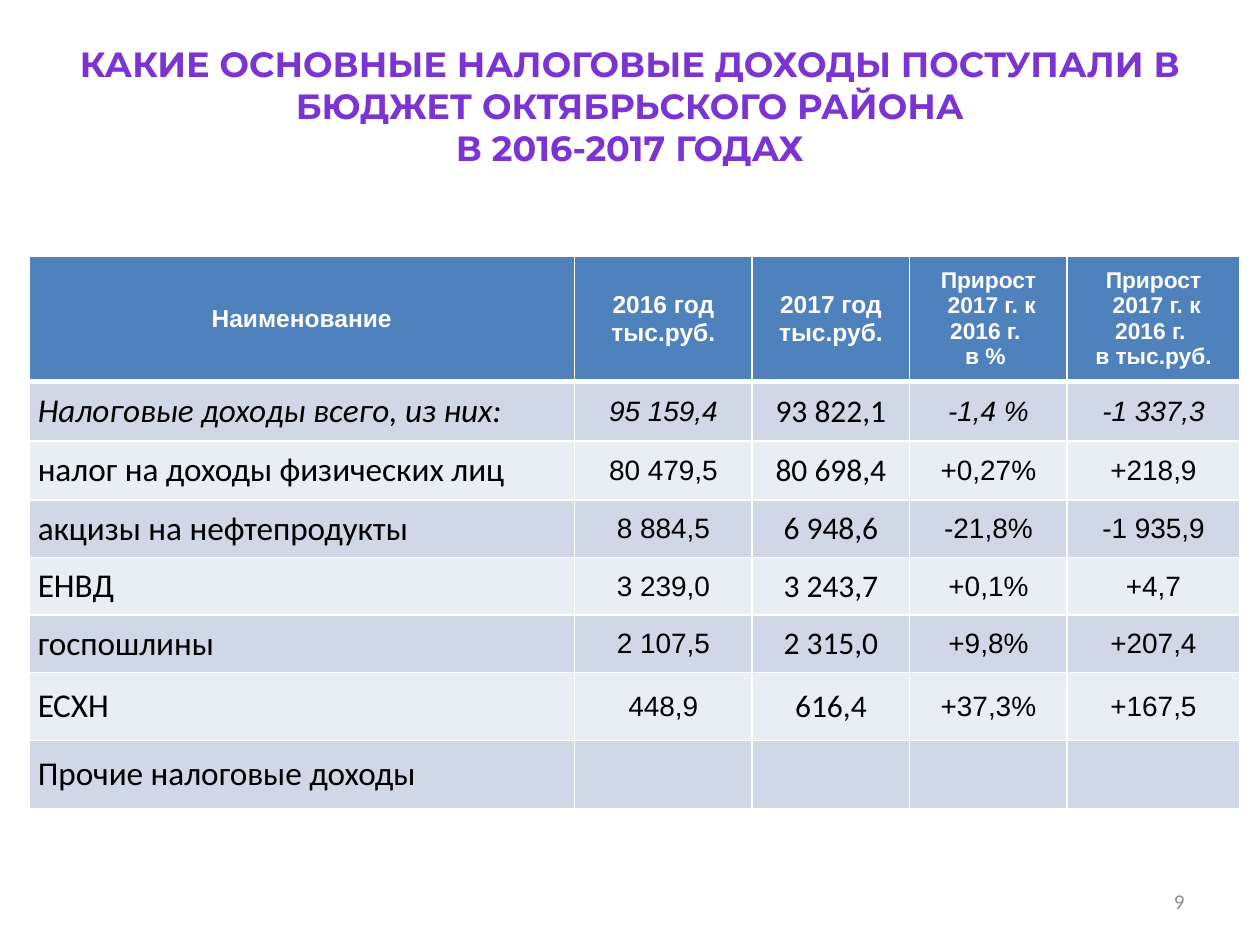
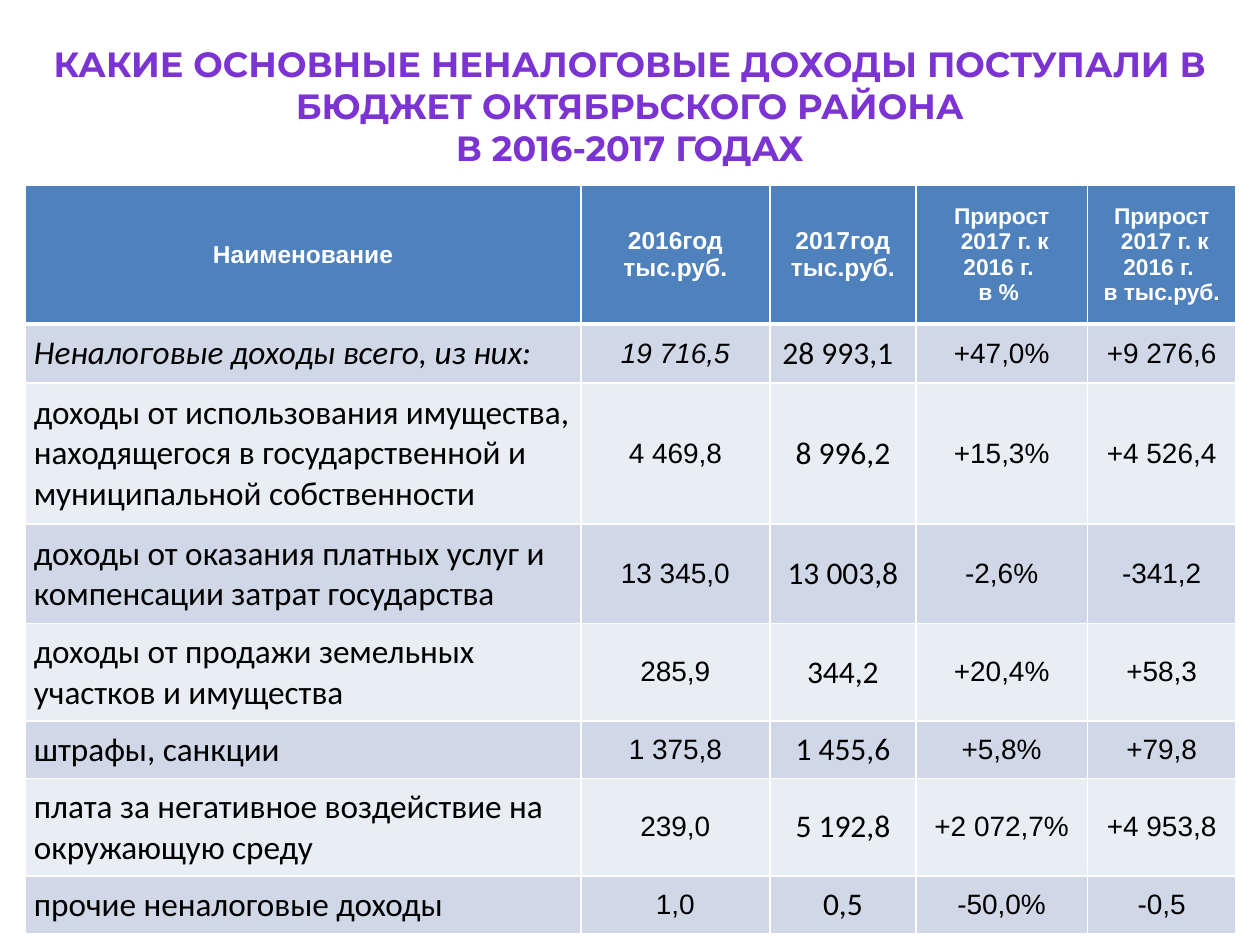
from lxml import etree
from pptx import Presentation
from pptx import util as u
from pptx.dml.color import RGBColor
from pptx.enum import text as t
from pptx.oxml import ns

COLORS = {
    "title": "7B34D2",
    "title_mid": "7330C4",
    "title_dark": "3D1B67",
    "title_outline": "5E457C",
    "number": "8C8C8C",
    "header": "4F81BD",
    "band_dark": "D0D8E8",
    "band_light": "E9EDF4",
    "white": "FFFFFF",
    "black": "000000",
}
TITLE_STOPS = [(0, "title_dark"), (43, "title"), (48, "title_mid"), (100, "title_dark")]
LABEL_MARGIN = 0.07
CENTER, LEFT, RIGHT = t.PP_ALIGN.CENTER, t.PP_ALIGN.LEFT, t.PP_ALIGN.RIGHT
# Font and size of each body column
COLUMN_FONTS = [("Calibri", 19), ("Arial", 16), ("Calibri", 18), ("Arial", 16), ("Arial", 16)]
HEADER_SIZES = [14, 14, 14, 13, 13]

TAX_ROWS = [
    ["Налоговые доходы всего, из них:", "95 159,4", "93 822,1", "-1,4 %", "-1 337,3"],
    ["налог на доходы физических лиц", "80 479,5", "80 698,4", "+0,27%", "+218,9"],
    ["акцизы на нефтепродукты", "8 884,5", "6 948,6", "-21,8%", "-1 935,9"],
    ["ЕНВД", "3 239,0", "3 243,7", "+0,1%", "+4,7"],
    ["госпошлины", "2 107,5", "2 315,0", "+9,8%", "+207,4"],
    ["ЕСХН", "448,9", "616,4", "+37,3%", "+167,5"],
    ["Прочие налоговые доходы", "", "", "", ""],
]
NON_TAX_ROWS = [
    ["Неналоговые доходы всего, из них:", "19 716,5", "28 993,1", "+47,0%", "+9 276,6"],
    ["доходы от использования имущества, находящегося в государственной и "
     "муниципальной собственности", "4 469,8", "8 996,2", "+15,3%", "+4 526,4"],
    ["доходы от оказания платных услуг и компенсации затрат государства",
     "13 345,0", "13 003,8", "-2,6%", "-341,2"],
    ["доходы от продажи земельных участков и имущества",
     "285,9", "344,2", "+20,4%", "+58,3"],
    ["штрафы, санкции", "1 375,8", "1 455,6", "+5,8%", "+79,8"],
    ["плата за негативное воздействие на окружающую среду",
     "239,0", "5 192,8", "+2 072,7%", "+4 953,8"],
    ["прочие неналоговые доходы", "1,0", "0,5", "-50,0%", "-0,5"],
]


def add_element(parent, tag, **attributes):
    element = etree.SubElement(parent, ns.qn(tag))
    for name, value in attributes.items():
        element.set(name, str(value))
    return element


def add_color(parent, color):
    add_element(parent, "a:srgbClr", val=COLORS[color])


def add_line(parent, tag, color, points):
    line = add_element(parent, tag, w=int(u.Pt(points)))
    add_color(add_element(line, "a:solidFill"), color)
    return line


class RevenueDeck:
    """Holds the shared style and the slide being built."""

    def __init__(self):
        self.presentation = Presentation()
        self.presentation.slide_width = u.Inches(10)
        self.presentation.slide_height = u.Inches(7.5)
        self.slide = None

    def add_slide(self):
        self.slide = self.presentation.slides.add_slide(self.presentation.slide_layouts[6])

    def format_text(self, text_frame, font, size, color, align, bold=False, italic=False):
        for paragraph in text_frame.paragraphs:
            paragraph.alignment = align
            for run in paragraph.runs:
                run.font.name = font
                run.font.size = u.Pt(size)
                run.font.bold = bold
                run.font.italic = italic
                run.font.color.rgb = RGBColor.from_string(COLORS[color])

    def add_text(self, text, box, **style):
        shape = self.slide.shapes.add_textbox(*map(u.Inches, box))
        shape.text_frame.word_wrap = True
        shape.text_frame.text = text
        self.format_text(shape.text_frame, **style)
        return shape.text_frame

    def add_title(self, revenue_kind):
        text = (f"КАКИЕ ОСНОВНЫЕ {revenue_kind} ДОХОДЫ ПОСТУПАЛИ В "
                "БЮДЖЕТ ОКТЯБРЬСКОГО РАЙОНА\vВ 2016-2017 ГОДАХ")
        text_frame = self.add_text(text, (0, 0.29, 10, 1.11), font="Montserrat", size=20,
                                   color="title", align=CENTER, bold=True)
        for run in text_frame.paragraphs[0].runs:
            self.add_gradient(run)

    def add_gradient(self, run):
        """Give the run a thin outline and a vertical gradient fill."""
        run.font.fill.background()
        properties = run.font._element
        properties.remove(properties.find(ns.qn("a:noFill")))
        outline = add_line(properties, "a:ln", "title_outline", 0.71)
        gradient = add_element(properties, "a:gradFill")
        stops = add_element(gradient, "a:gsLst")
        for percent, color in TITLE_STOPS:
            add_color(add_element(stops, "a:gs", pos=percent * 1000), color)
        add_element(gradient, "a:lin", ang=90 * 60000, scaled=0)
        properties.insert(0, outline)
        properties.insert(1, gradient)

    def add_number(self, number):
        text_frame = self.add_text(str(number), (7.17, 6.95, 2.33, 0.4), font="Calibri",
                                   size=12, color="number", align=RIGHT)
        text_frame.vertical_anchor = t.MSO_ANCHOR.MIDDLE

    def format_cell(self, cell, text, fill, top=1, bottom=1, **style):
        cell.text = text
        cell.vertical_anchor = t.MSO_ANCHOR.MIDDLE
        self.format_text(cell.text_frame, **style)
        properties = cell._tc.get_or_add_tcPr()
        for side, points in zip("LRTB", (1, 1, top, bottom)):
            add_line(properties, f"a:ln{side}", "white", points)
        cell.fill.solid()
        cell.fill.fore_color.rgb = RGBColor.from_string(COLORS[fill])

    def add_table(self, left, top, widths, heights, header, rows, italic_columns,
                  left_cells=()):
        """Italics apply to the total row; left_cells are (row, column) pairs."""
        box = map(u.Inches, (left, top, sum(widths), sum(heights)))
        table = self.slide.shapes.add_table(len(heights), len(widths), *box).table
        for column, width in zip(table.columns, widths):
            column.width = u.Inches(width)
        for row, height in zip(table.rows, heights):
            row.height = u.Inches(height)

        for column, (text, size) in enumerate(zip(header, HEADER_SIZES)):
            self.format_cell(table.cell(0, column), text, "header", bottom=3, font="Arial",
                             size=size, color="white", align=CENTER, bold=True)
        for row, values in enumerate(rows, start=1):
            fill = "band_dark" if row % 2 else "band_light"
            for column, (text, (font, size)) in enumerate(zip(values, COLUMN_FONTS)):
                cell = table.cell(row, column)
                at_left = column == 0 or (row, column) in left_cells
                self.format_cell(cell, text, fill, top=3 if row == 1 else 1, font=font,
                                 size=size, color="black", align=LEFT if at_left else CENTER,
                                 italic=row == 1 and column in italic_columns)
                if column == 0:
                    cell.margin_left = cell.margin_right = u.Inches(LABEL_MARGIN)
                    cell.margin_top = cell.margin_bottom = u.Inches(LABEL_MARGIN)


def make_header(year_suffix):
    years = [f"{year}{year_suffix}\nтыс.руб." for year in (2016, 2017)]
    growth = [f"Прирост\n 2017 г. к 2016 г. \n{unit}" for unit in ("в % ", "в тыс.руб.")]
    return ["Наименование", *years, *growth]


def main():
    deck = RevenueDeck()

    deck.add_slide()
    deck.add_title("НАЛОГОВЫЕ")
    deck.add_number(9)
    deck.add_table(0.23, 2.03, [4.33, 1.41, 1.25, 1.25, 1.37],
                   [1, 0.47, 0.47, 0.45, 0.45, 0.45, 0.54, 0.54],
                   make_header(" год"), TAX_ROWS, italic_columns=(0, 1, 3, 4))

    deck.add_slide()
    deck.add_title("НЕНАЛОГОВЫЕ")
    deck.add_table(0.2, 1.47, [4.41, 1.5, 1.16, 1.36, 1.18],
                   [1.1, 0.47, 1.12, 0.79, 0.77, 0.45, 0.76, 0.45],
                   make_header("год"), NON_TAX_ROWS, italic_columns=(0, 1),
                   left_cells=[(1, 2)])

    deck.presentation.save("out.pptx")


if __name__ == "__main__":
    main()
